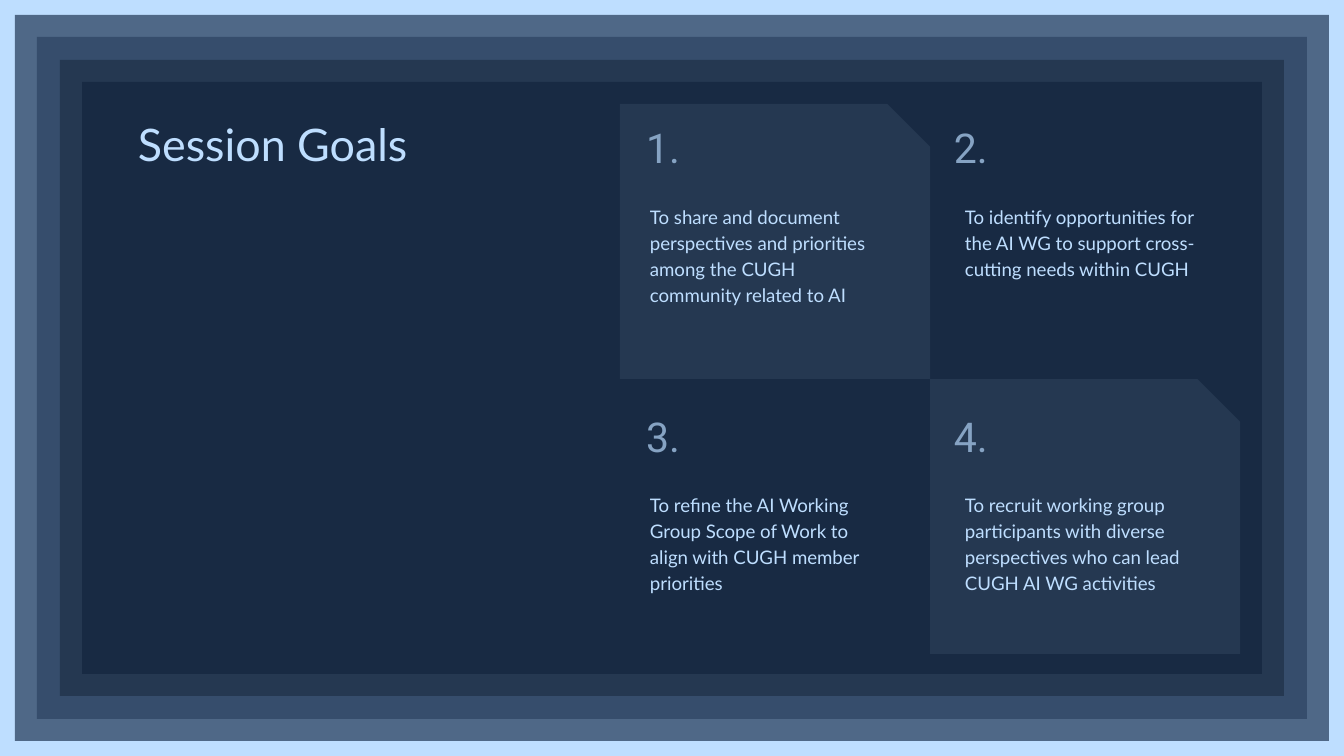
from pptx import Presentation
from pptx.dml.color import RGBColor
from pptx.enum.shapes import MSO_SHAPE as Shape
from pptx.enum.text import MSO_ANCHOR as Anchor, MSO_AUTO_SIZE as AutoSize, PP_ALIGN as Align
from pptx.util import Emu, Pt

COLORS = {
    "sky": "BEDEFF",
    "steel": "86A3C3",
    "frame": "4F6887",
    "slate": "364D6C",
    "panel": "253851",
    "navy": "182A43",
}
TITLE = "Session Goals"
GOALS = [
    "To share and document perspectives and priorities among the CUGH community related to AI",
    "To identify opportunities for the AI WG to support cross-cutting needs within CUGH",
    "To refine the AI Working Group Scope of Work to align with CUGH member priorities",
    "To recruit working group participants with diverse perspectives who can lead CUGH AI WG activities",
]

# Lengths in px, 134.4 to the inch
SLIDE_W, SLIDE_H = 1344, 756
FRAMES = [(15, "frame"), (37, "slate"), (60, "panel"), (82, "navy")]
GRID_X, GRID_Y, TILE_W, TILE_H = 620, 104, 310, 275
NUMBER_X, NUMBER_Y = (646, 954), (122, 411)
GOAL_X, GOAL_Y = (650, 965), (203, 491)


def px(length):
    return Emu(round(length * 914400 / 134.4))


def color(name):
    return RGBColor.from_string(COLORS[name])


def add_block(slide, kind, left, top, width, height, fill):
    block = slide.shapes.add_shape(kind, px(left), px(top), px(width), px(height))
    block.shadow.inherit = False
    block.fill.solid()
    block.fill.fore_color.rgb = color(fill)
    block.line.fill.background()
    return block


def write(box, text, left, top, width, height, *, size, font="Lato", ink="sky", spacing=1.0):
    """Place a title or text box and fill it with one formatted paragraph."""
    box.left, box.top, box.width, box.height = map(px, (left, top, width, height))
    frame = box.text_frame
    frame.word_wrap = True
    frame.auto_size = AutoSize.NONE
    frame.vertical_anchor = Anchor.TOP
    frame.margin_left = frame.margin_top = frame.margin_bottom = 0
    frame.margin_right = px(13)
    para = frame.paragraphs[0]
    para.alignment = Align.LEFT
    para.line_spacing = spacing
    span = para.add_run()
    span.text = text
    span.font.size = Pt(size)
    span.font.name = font
    span.font.color.rgb = color(ink)


def add_text(slide, *args, **style):
    write(slide.shapes.add_textbox(0, 0, 0, 0), *args, **style)


def main():
    deck = Presentation()
    deck.slide_width, deck.slide_height = px(SLIDE_W), px(SLIDE_H)
    page = deck.slides.add_slide(deck.slide_layouts[5])
    page.background.fill.solid()
    page.background.fill.fore_color.rgb = color("sky")

    for inset, fill in FRAMES:
        add_block(page, Shape.RECTANGLE, inset, inset,
                  SLIDE_W - 2 * inset, SLIDE_H - 2 * inset, fill)
    for step in range(2):
        tile = add_block(page, Shape.SNIP_1_RECTANGLE, GRID_X + step * TILE_W,
                         GRID_Y + step * TILE_H, TILE_W, TILE_H, "panel")
        tile.adjustments[0] = 0.155

    title = page.shapes.title
    page.shapes._spTree.append(title._element)  # bring in front of the frames
    write(title, TITLE, 138, 117, 421, 120, size=24)

    for index, goal in enumerate(GOALS):
        row, column = divmod(index, 2)
        add_text(page, f"{index + 1}.", NUMBER_X[column], NUMBER_Y[row], 250, 70,
                 size=22, font="Roboto", ink="steel")
        add_text(page, goal, GOAL_X[column], GOAL_Y[row], 250, 113, size=10, spacing=1.15)

    deck.save("out.pptx")


if __name__ == "__main__":
    main()
